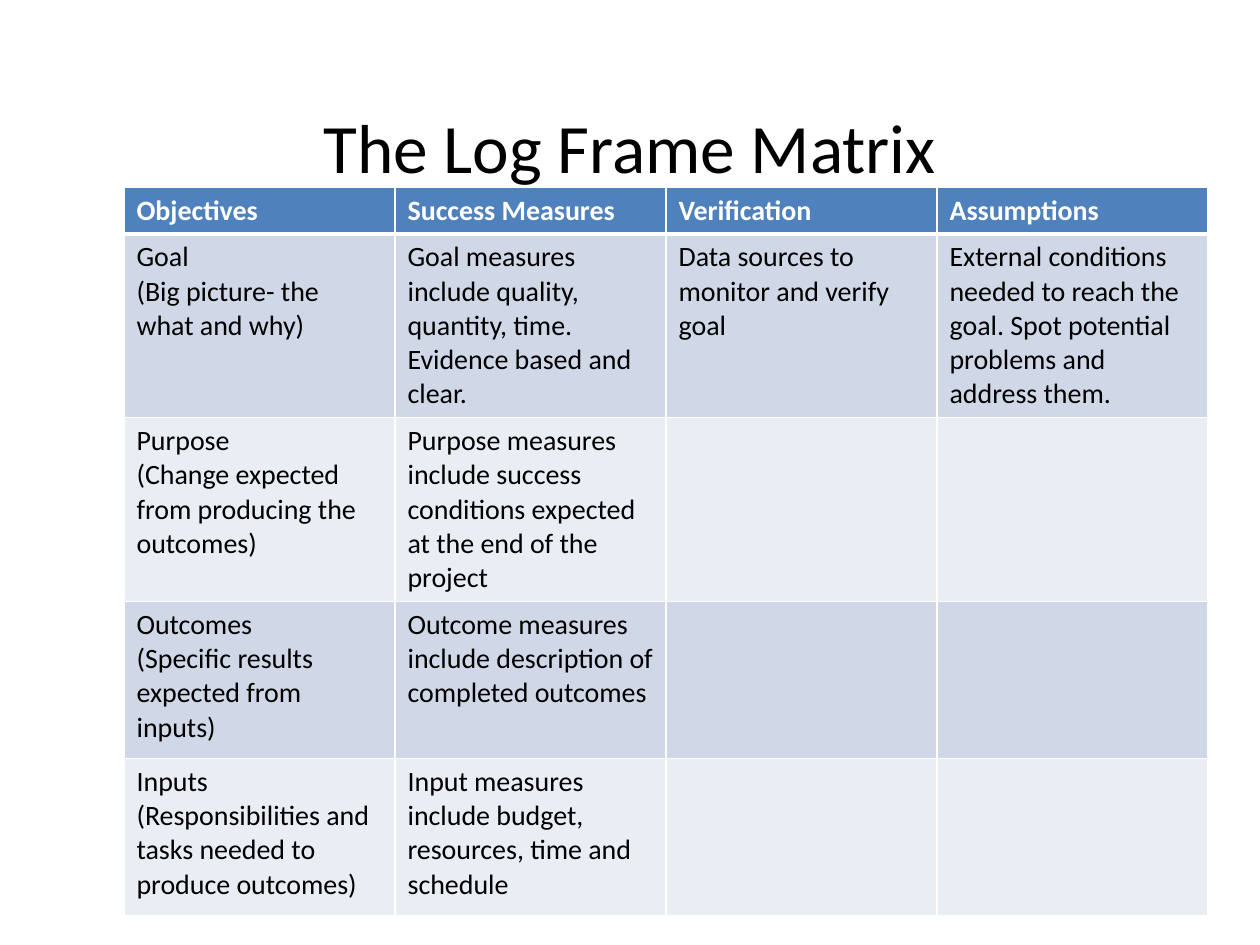
from lxml import etree
from pptx import Presentation
from pptx import util as u
from pptx.dml.color import RGBColor
from pptx.enum import text
from pptx.oxml.ns import qn

TITLE = "The Log Frame Matrix"
HEADERS = ["Objectives", "Success Measures", "Verification", "Assumptions"]
ROWS = [
    ["Goal\n(Big picture- the what and why)",
     "Goal measures include quality, quantity, time. Evidence based and clear.",
     "Data sources to monitor and verify goal",
     "External conditions needed to reach the goal. Spot potential problems and address them."],
    ["Purpose\n(Change expected from producing the outcomes)",
     "Purpose measures include success conditions expected at the end of the project", "", ""],
    ["Outcomes\n(Specific results expected from inputs)",
     "Outcome measures include description of completed outcomes", "", ""],
    ["Inputs\n(Responsibilities and tasks needed to produce outcomes)",
     "Input measures include budget, resources, time and schedule", "", ""],
]

FONT = "Calibri"
BLACK = RGBColor(0x00, 0x00, 0x00)
WHITE = RGBColor(0xFF, 0xFF, 0xFF)
HEADER_FILL = RGBColor(0x4F, 0x81, 0xBD)
BANDS = [RGBColor(0xD0, 0xD8, 0xE8), RGBColor(0xE9, 0xED, 0xF4)]

LEFT, TOP = 124, 187
COL_W, HEADER_H, ROW_H = 271, 39, 157


def px(n):
    return u.Emu(round(n * 914400 / 126))


def write(tf, content, size=16, color=BLACK, bold=False, align=None):
    tf.text = content
    for p in tf.paragraphs:
        p.alignment = align
        f = p.font
        f.name, f.size, f.bold = FONT, u.Pt(size), bold
        f.color.rgb = color


def set_borders(cell, **widths):
    tc_pr = cell._tc.get_or_add_tcPr()
    for side in "LRTB":
        ln = etree.SubElement(tc_pr, qn(f"a:ln{side}"), w=str(u.Pt(widths.get(side, 1))))
        fill = etree.SubElement(ln, qn("a:solidFill"))
        etree.SubElement(fill, qn("a:srgbClr"), val=str(WHITE))


def add_matrix(s):
    rows = [HEADERS] + ROWS
    heights = [HEADER_H] + [ROW_H] * len(ROWS)
    table = s.shapes.add_table(len(rows), len(HEADERS), px(LEFT), px(TOP),
                               px(COL_W * len(HEADERS)), px(sum(heights))).table
    for col in table.columns:
        col.width = px(COL_W)
    for i, (values, height) in enumerate(zip(rows, heights)):
        table.rows[i].height = px(height)
        header = i == 0
        for j, value in enumerate(values):
            cell = table.cell(i, j)
            set_borders(cell, B=3 if header else 1, T=3 if i == 1 else 1)
            cell.fill.solid()
            cell.fill.fore_color.rgb = HEADER_FILL if header else BANDS[(i - 1) % 2]
            write(cell.text_frame, value, color=WHITE if header else BLACK, bold=header)


def main():
    prs = Presentation()
    prs.slide_width, prs.slide_height = px(1260), px(945)
    s = prs.slides.add_slide(prs.slide_layouts[5])
    title = s.shapes.title
    title.left, title.top, title.width, title.height = px(63), px(96), px(1134), px(99)
    title.text_frame.vertical_anchor = text.MSO_ANCHOR.MIDDLE
    write(title.text_frame, TITLE, size=39.6, align=text.PP_ALIGN.CENTER)
    add_matrix(s)
    prs.save("out.pptx")


if __name__ == "__main__":
    main()
